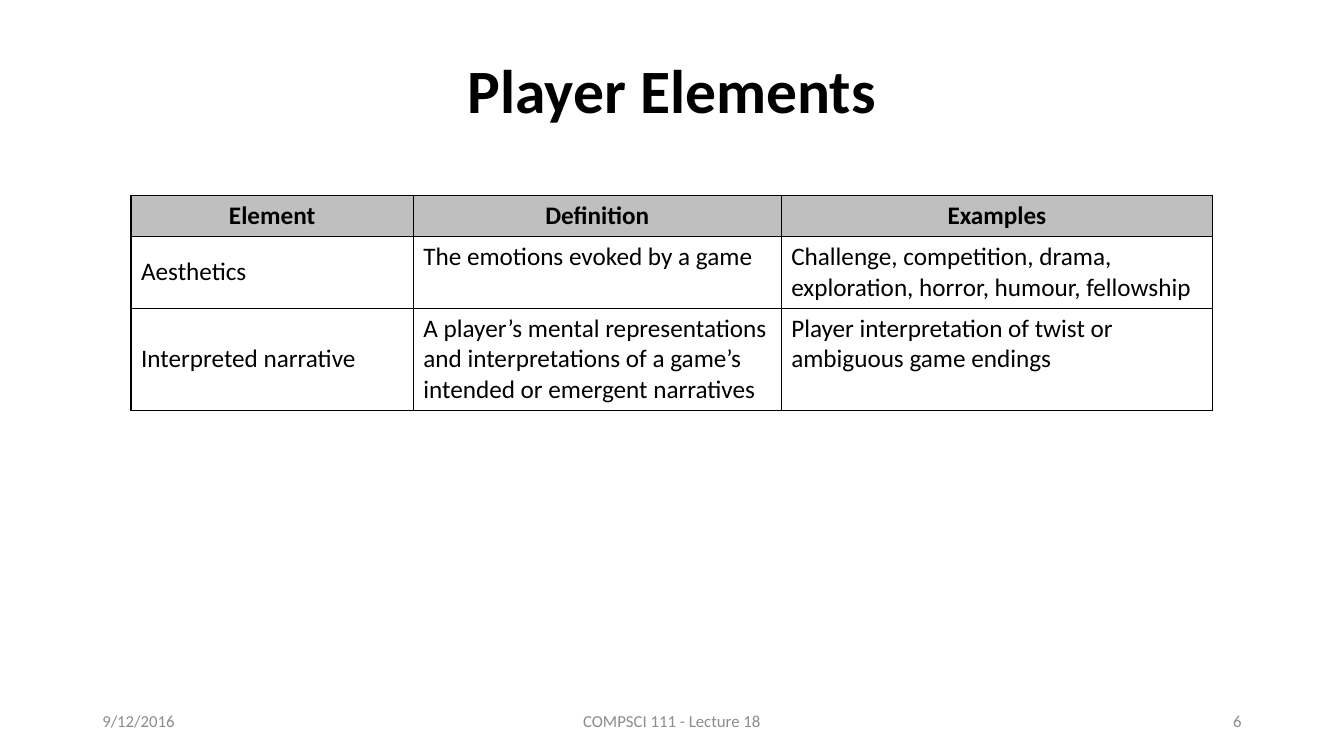
from dataclasses import dataclass

from lxml import etree
from pptx import Presentation
from pptx.dml.color import RGBColor
from pptx.enum.text import MSO_ANCHOR, PP_ALIGN
from pptx.oxml.ns import qn
from pptx.util import Pt

LEFT, CENTER, RIGHT = PP_ALIGN.LEFT, PP_ALIGN.CENTER, PP_ALIGN.RIGHT
TOP, MIDDLE = MSO_ANCHOR.TOP, MSO_ANCHOR.MIDDLE
TITLE_ONLY = 5


@dataclass(frozen=True)
class Theme:
    font: str = "Calibri"
    ink: str = "000000"
    muted: str = "8C8C8C"
    header: str = "BFBFBF"
    paper: str = "FFFFFF"
    title: int = 44
    body: int = 18
    small: int = 12


@dataclass(frozen=True)
class Footer:
    text: str
    left: float
    width: float
    align: PP_ALIGN


THEME = Theme()
FOOTERS = [
    Footer("9/12/2016", 66, 216, LEFT),
    Footer("COMPSCI 111 - Lecture 18", 318, 324, CENTER),
    Footer("6", 678, 216, RIGHT),
]
WIDTHS = [201.6, 262.8, 308.2]
HEIGHTS = [29.2, 51.2, 73]
ROWS = [
    ("Element", "Definition", "Examples"),
    ("Aesthetics", "The emotions evoked by a game",
     "Challenge, competition, drama, exploration, horror, humour, fellowship"),
    ("Interpreted narrative",
     "A player’s mental representations and interpretations of a game’s "
     "intended or emergent narratives",
     "Player interpretation of twist or ambiguous game endings"),
]


def write(frame, text: str, *, size: int, color: str = THEME.ink,
          bold: bool = False, align: PP_ALIGN = LEFT, spacing: float = 1.0) -> None:
    frame.word_wrap = True
    para = frame.paragraphs[0]
    para.alignment = align
    para.line_spacing = spacing
    run = para.add_run()
    run.text = text
    font = run.font
    font.name, font.size, font.bold = THEME.font, Pt(size), bold
    font.color.rgb = RGBColor.from_string(color)


def add_border(cell, color: str, width: float) -> None:
    """Outline all four sides; border lines must precede the cell's fill."""
    props = cell._tc.get_or_add_tcPr()
    for index, side in enumerate(("a:lnL", "a:lnR", "a:lnT", "a:lnB")):
        line = etree.Element(qn(side), w=str(Pt(width)))
        fill = etree.SubElement(line, qn("a:solidFill"))
        etree.SubElement(fill, qn("a:srgbClr"), val=color)
        props.insert(index, line)


def add_title(slide, text: str) -> None:
    title = slide.shapes.title
    title.left, title.top = Pt(66), Pt(14.4)
    title.width, title.height = Pt(828), Pt(104.4)
    title.text_frame.vertical_anchor = MIDDLE
    write(title.text_frame, text, size=THEME.title, bold=True,
          align=CENTER, spacing=0.9)


def add_grid(slide) -> None:
    table = slide.shapes.add_table(
        len(ROWS), len(WIDTHS), Pt(93.6), Pt(139.7),
        Pt(sum(WIDTHS)), Pt(sum(HEIGHTS))).table
    for column, width in zip(table.columns, WIDTHS):
        column.width = Pt(width)
    for row, height in zip(table.rows, HEIGHTS):
        row.height = Pt(height)
    for r, texts in enumerate(ROWS):
        head = r == 0
        for c, text in enumerate(texts):
            cell = table.cell(r, c)
            cell.fill.solid()
            cell.fill.fore_color.rgb = RGBColor.from_string(
                THEME.header if head else THEME.paper)
            cell.vertical_anchor = MIDDLE if c == 0 and not head else TOP
            add_border(cell, THEME.ink, 1)
            write(cell.text_frame, text, size=THEME.body, bold=head,
                  align=CENTER if head else LEFT)


def add_footer(slide, footer: Footer) -> None:
    box = slide.shapes.add_textbox(
        Pt(footer.left), Pt(500.4), Pt(footer.width), Pt(28.8))
    box.text_frame.vertical_anchor = MIDDLE
    write(box.text_frame, footer.text, size=THEME.small,
          color=THEME.muted, align=footer.align)


def main() -> None:
    deck = Presentation()
    deck.slide_width, deck.slide_height = Pt(960), Pt(540)
    slide = deck.slides.add_slide(deck.slide_layouts[TITLE_ONLY])
    add_title(slide, "Player Elements")
    add_grid(slide)
    for footer in FOOTERS:
        add_footer(slide, footer)
    deck.save("out.pptx")


if __name__ == "__main__":
    main()
